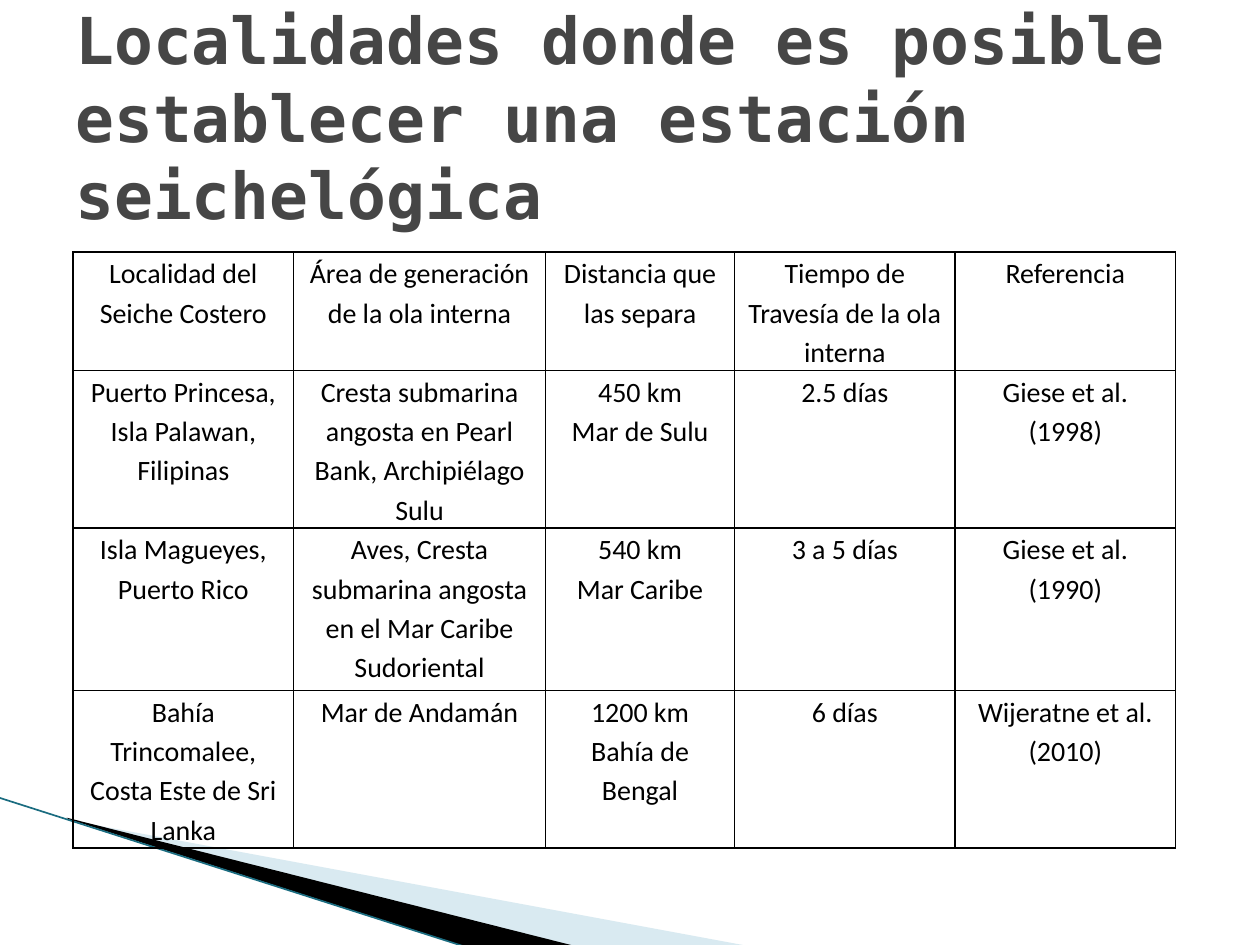
from lxml import etree
from pptx import Presentation
from pptx import util as u
from pptx.dml.color import RGBColor
from pptx.enum import shapes, text
from pptx.oxml.ns import qn

TITLE = "Localidades donde es posible establecer una estación seichelógica"
COLS = [1.75, 2, 1.5, 1.75, 1.75]
ROWS = [0.94, 1.25, 1.29, 1.25]
CELLS = [
    ["Localidad del Seiche Costero", "Área de generación de la ola interna",
     "Distancia que las separa", "Tiempo de Travesía de la ola interna",
     "Referencia"],
    ["Puerto Princesa, Isla Palawan, Filipinas",
     "Cresta submarina angosta en Pearl Bank, Archipiélago Sulu",
     "450 km\nMar de Sulu", "2.5 días", "Giese et al. (1998)"],
    ["Isla Magueyes, Puerto Rico",
     "Aves, Cresta submarina angosta en el Mar Caribe Sudoriental",
     "540 km\nMar Caribe", "3 a 5 días", "Giese et al. (1990)"],
    ["Bahía Trincomalee, Costa Este de Sri Lanka", "Mar de Andamán",
     "1200 km\nBahía de Bengal", "6 días", "Wijeratne et al. (2010)"],
]


def paint(color, code):
    color.rgb = RGBColor.from_string(code)


def style(para, name, size, code, bold=False):
    font = para.font
    font.name, font.size, font.bold = name, u.Pt(size), bold
    paint(font.color, code)


def add_wedge(slide, points, code, alpha=None):
    spots = [(u.Inches(x), u.Inches(y)) for x, y in points]
    pen = slide.shapes.build_freeform(*spots[0])
    pen.add_line_segments(spots[1:], close=True)
    wedge = pen.convert_to_shape()
    wedge.shadow.inherit = False
    wedge.line.fill.background()
    wedge.fill.solid()
    paint(wedge.fill.fore_color, code)
    if alpha is not None:
        tone = wedge.fill._xPr.find(".//" + qn("a:srgbClr"))
        etree.SubElement(tone, qn("a:alpha"), val=str(alpha * 1000))


def add_line(slide, start, end, code, width):
    line = slide.shapes.add_connector(
        shapes.MSO_CONNECTOR.STRAIGHT, *map(u.Inches, start + end))
    line.line.width = u.Pt(width)
    paint(line.line.color, code)
    etree.SubElement(line._element.spPr, qn("a:effectLst"))


def add_title(slide, words):
    box = slide.shapes.add_textbox(*map(u.Inches, (0.5, 0.3, 9, 1.25)))
    frame = box.text_frame
    frame.word_wrap = True
    frame.vertical_anchor = text.MSO_ANCHOR.MIDDLE
    frame.text = words
    style(frame.paragraphs[0], "DejaVu Sans Mono", 36.9, "464646", True)


def add_border(cell, code, width):
    props = cell._tc.get_or_add_tcPr()
    for side in "LRTB":
        edge = etree.SubElement(props, qn("a:ln" + side), w=str(u.Pt(width)))
        fill = etree.SubElement(edge, qn("a:solidFill"))
        etree.SubElement(fill, qn("a:srgbClr"), val=code)


def fill_cell(cell, words):
    add_border(cell, "000000", 1)
    cell.fill.background()
    cell.margin_left = cell.margin_right = u.Inches(0.07)
    cell.margin_top = cell.margin_bottom = 0
    cell.text = words
    for para in cell.text_frame.paragraphs:
        para.alignment = text.PP_ALIGN.CENTER
        para.line_spacing = 1.15
        style(para, "Calibri", 16, "000000")


def add_grid(slide):
    area = map(u.Inches, (0.58, 2, sum(COLS), sum(ROWS)))
    table = slide.shapes.add_table(len(ROWS), len(COLS), *area).table
    table.first_row = table.horz_banding = False
    for col, width in zip(table.columns, COLS):
        col.width = u.Inches(width)
    for row, height, words in zip(table.rows, ROWS, CELLS):
        row.height = u.Inches(height)
        for cell, word in zip(row.cells, words):
            fill_cell(cell, word)


def main():
    deck = Presentation()
    deck.slide_width, deck.slide_height = u.Inches(10), u.Inches(7.5)
    slide = deck.slides.add_slide(deck.slide_layouts[6])
    add_wedge(slide, [(0.55, 6.51), (5.95, 7.51), (4.56, 7.51), (0.55, 6.5)],
              "A0CBDC", 40)
    add_wedge(slide, [(0.53, 6.49), (4.57, 7.51), (3.72, 7.52), (0.54, 6.5)],
              "000000")
    add_line(slide, (-0.01, 6.33), (3.71, 7.52), "1A6C80", 0.95)
    add_title(slide, TITLE)
    add_grid(slide)
    deck.save("out.pptx")


if __name__ == "__main__":
    main()
